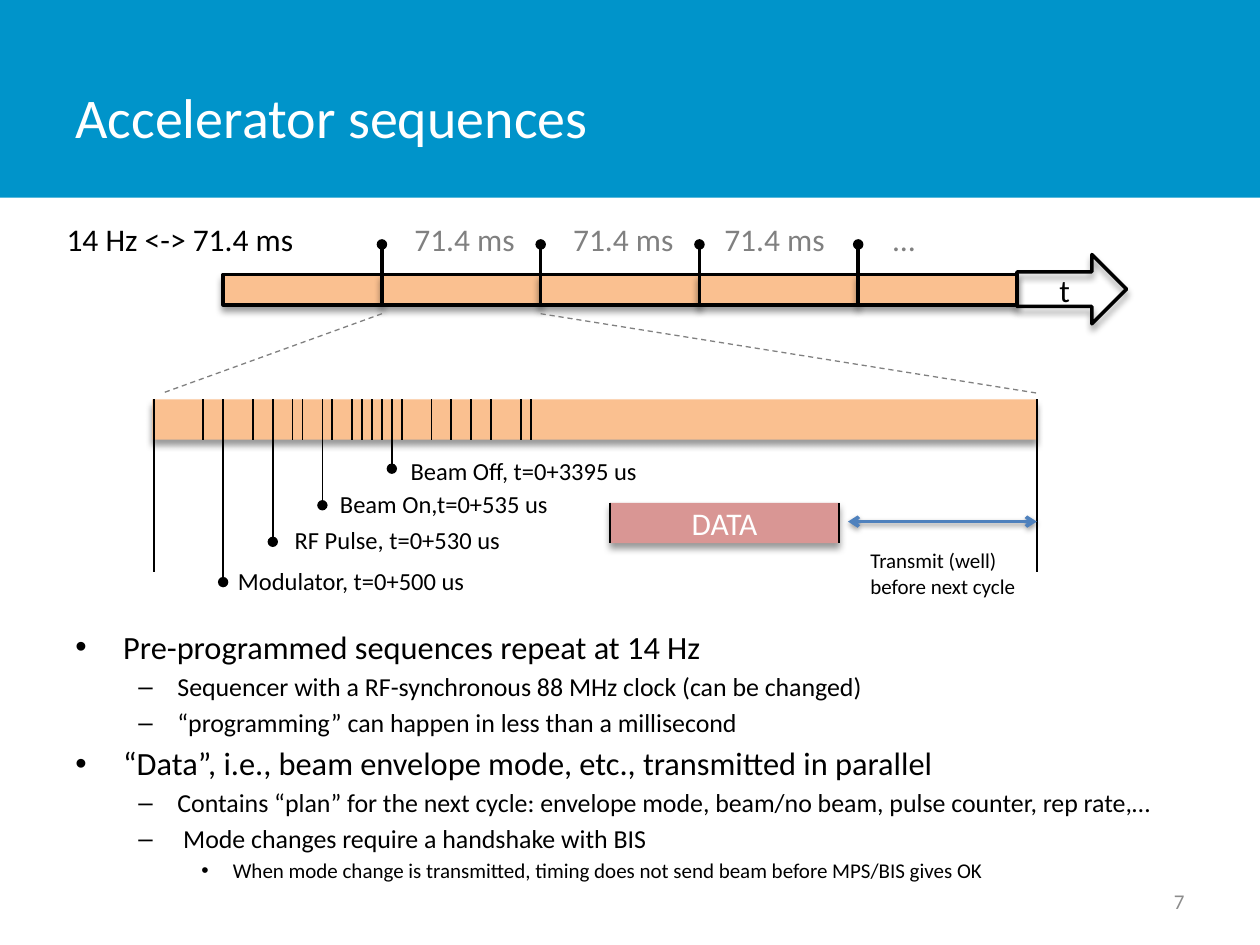
"""Builds the slide on accelerator sequences and their timing."""
from lxml import etree
from pptx import Presentation, util as u
from pptx.dml.color import RGBColor
from pptx.enum import dml, shapes, text
from pptx.oxml.ns import qn

COLORS = {
    "banner": "0094CA", "beam": "FAC090", "data": "D99694", "arrow": "4F81BD",
    "black": "000000", "white": "FFFFFF", "grey": "808080", "number": "8C8C8C",
}
FONT = "Calibri"
COLS, ROWS = 100, 75
SLOT = 0.7875
BAR_TOP, BAR_BOTTOM = 31.7, 34.9
CYCLES = [7, 23, 39, 55, 71]
TICKS = [5, 10, 14, 15, 18, 20, 21, 22, 23, 25, 28, 30, 32, 34, 37, 38]
EVENTS = [
    (7, 46.2, 17.9, 44.4, 20.3, "Modulator, t=0+500 us"),
    (12, 43, 22.4, 41.2, 18.4, "RF Pulse, t=0+530 us"),
    (17, 40.1, 26, 38.3, 18.7, "Beam On,t=0+535 us"),
    (24, 37.2, 31.6, 35.7, 20.2, "Beam Off, t=0+3395 us"),
]
LEVELS = [(0.38, -0.38, 18.5, "•"), (0.81, -0.31, 14.8, "–"), (1.25, -0.25, 12, "•")]
POINTS = [
    (0, "Pre-programmed sequences repeat at 14 Hz"),
    (1, "Sequencer with a RF-synchronous 88 MHz clock (can be changed)"),
    (1, "“programming” can happen in less than a millisecond"),
    (0, "“Data”, i.e., beam envelope mode, etc., transmitted in parallel"),
    (1, "Contains “plan” for the next cycle: envelope mode, beam/no beam, "
        "pulse counter, rep rate,…"),
    (1, " Mode changes require a handshake with BIS"),
    (2, "When mode change is transmitted, timing does not send beam before "
        "MPS/BIS gives OK"),
]


def slot(n):
    """Return the page column of a timing slot."""
    return 12.2 + n * SLOT


class Deck:
    """Holds the style and the current slide."""

    def __init__(self):
        """Open a presentation with one blank slide."""
        self.prs = Presentation()
        self.prs.slide_width, self.prs.slide_height = u.Inches(10), u.Inches(7.5)
        self.s = self.prs.slides.add_slide(self.prs.slide_layouts[6])

    def place(self, col, row, cols, rows):
        """Turn columns and rows into slide lengths."""
        w, h = self.prs.slide_width / COLS, self.prs.slide_height / ROWS
        return [u.Emu(round(v)) for v in (col * w, row * h, cols * w, rows * h)]

    def color(self, name):
        """Look up a named colour."""
        return RGBColor.from_string(COLORS[name])

    def shade(self, effects, blur, dist, alpha):
        """Add a soft shadow below an element."""
        shadow = etree.SubElement(
            effects, qn("a:outerShdw"), blurRad=str(u.Pt(blur)), dist=str(u.Pt(dist)),
            dir="5400000", rotWithShape="0")
        clr = etree.SubElement(shadow, qn("a:srgbClr"), val=COLORS["black"])
        etree.SubElement(clr, qn("a:alpha"), val=str(alpha * 1000))

    def shape(self, grid, fill=None, outline=False, shadow=True, kind="RECTANGLE"):
        """Draw a preset shape."""
        sp = self.s.shapes.add_shape(
            shapes.MSO_SHAPE[kind], *self.place(*grid))
        if fill:
            sp.fill.solid()
            sp.fill.fore_color.rgb = self.color(fill)
        else:
            sp.fill.background()
        if outline:
            sp.line.color.rgb = self.color("black")
            sp.line.width = u.Pt(2)
        else:
            sp.line.fill.background()
        sp.shadow.inherit = False
        if shadow:
            self.shade(sp.element.spPr.find(qn("a:effectLst")), 4, 3, 40)
        return sp

    def line(self, x1, y1, x2, y2, color="black", width=1, dash=False,
             head=None, tail=None, shadow=False):
        """Draw a straight line with optional ends."""
        sp = self.s.shapes.add_connector(
            shapes.MSO_CONNECTOR.STRAIGHT, *self.place(x1, y1, x2, y2))
        sp.line.color.rgb = self.color(color)
        sp.line.width = u.Pt(width)
        if dash:
            sp.line.dash_style = dml.MSO_LINE.DASH
        spPr = sp.element.spPr
        for tag, end in (("a:headEnd", head), ("a:tailEnd", tail)):
            if end:
                etree.SubElement(spPr.find(qn("a:ln")), qn(tag), type=end)
        effects = etree.SubElement(spPr, qn("a:effectLst"))
        if shadow:
            self.shade(effects, 3.1, 1.6, 38)

    def run(self, p, words, size, color):
        """Add a styled run to a paragraph."""
        r = p.add_run()
        r.text = words
        r.font.name, r.font.size = FONT, u.Pt(size)
        r.font.color.rgb = self.color(color)

    def caption(self, sp, words, size, color, align="LEFT", anchor="MIDDLE"):
        """Put one paragraph into a shape."""
        tf = sp.text_frame
        tf.vertical_anchor = text.MSO_ANCHOR[anchor]
        p = tf.paragraphs[0]
        p.alignment = text.PP_ALIGN[align]
        self.run(p, words, size, color)

    def box(self, grid, wrap=True, grow=False):
        """Add an empty text box."""
        sp = self.s.shapes.add_textbox(*self.place(*grid))
        sp.text_frame.word_wrap = wrap
        if grow:
            sp.text_frame.auto_size = text.MSO_AUTO_SIZE.SHAPE_TO_FIT_TEXT
        return sp

    def label(self, grid, words, size=18, color="black", wrap=False):
        """Add a text box that fits its words."""
        self.caption(self.box(grid, wrap, True), words, size, color, anchor="TOP")

    def bullets(self, grid, points):
        """Add a list with levels."""
        tf = self.box(grid).text_frame
        for i, (level, words) in enumerate(points):
            p = tf.add_paragraph() if i else tf.paragraphs[0]
            left, indent, size, mark = LEVELS[level]
            p.level = level
            pPr = p._p.get_or_add_pPr()
            pPr.set("marL", str(u.Inches(left)))
            pPr.set("indent", str(u.Inches(indent)))
            etree.SubElement(pPr, qn("a:buFont"), typeface="Arial")
            etree.SubElement(pPr, qn("a:buChar"), char=mark)
            p.space_before = u.Pt(round(size * 0.18, 1) if i else 0)
            self.run(p, words, size, "black")


def main():
    """Build and save the slide."""
    d = Deck()
    d.shape((0, 0, COLS, 15.7), "banner", shadow=False)
    d.caption(d.box((5, 3, 78.1, 12.5)), "Accelerator sequences", 32, "white")
    d.bullets((5, 49.3, 90, 22), POINTS)
    d.caption(d.box((71.7, 69.5, 23.3, 4)), "7", 12, "number", "RIGHT")

    d.shape((slot(87), 20.2, 8.7, 5.5), outline=True, kind="RIGHT_ARROW")
    for n in CYCLES:
        d.shape((slot(n), 21.8, 16 * SLOT, 2.4), "beam", outline=True)
    for n in CYCLES[1:]:
        d.line(slot(n), 19.4, slot(n), 24.1, width=2, head="oval")
    d.label((83.1, 21, 2.9, 4), "t")
    d.label((4.3, 17, 20.3, 4), "14 Hz <-> 71.4 ms")
    for col in (31.9, 44.5, 56.5):
        d.label((col, 17, 10.1, 4), "71.4 ms", color="grey")
    d.label((69.9, 17, 3.8, 4), "…", color="grey")

    for start, end in ((slot(23), 12.9), (slot(39), slot(89))):
        d.line(start, 24.9, end, 31.2, "grey", 0.75, dash=True)
    d.shape((12.1, BAR_TOP, 70.2, BAR_BOTTOM - BAR_TOP), "beam")
    for n in TICKS:
        d.line(slot(n), BAR_TOP, slot(n), BAR_BOTTOM)
    for n in (0, 89):
        d.line(slot(n), BAR_TOP, slot(n), 45.4)
    for n, bottom, col, row, cols, words in EVENTS:
        d.line(slot(n), BAR_TOP, slot(n), bottom, tail="oval")
        d.label((col, row, cols, 3.4), words, 14)

    d.caption(d.shape((48.4, 39.9, 18.2, 3.2), "data"), "DATA", 18, "white", "CENTER")
    for col in (48.4, 66.6):
        d.line(col, 39.9, col, 43.1)
    d.line(67.3, 41.4, slot(89), 41.4, "arrow", 2, head="arrow", tail="arrow",
           shadow=True)
    d.label((68.1, 43, 15.7, 5), "Transmit (well) before next cycle", 12, wrap=True)
    d.prs.save("out.pptx")


if __name__ == "__main__":
    main()
